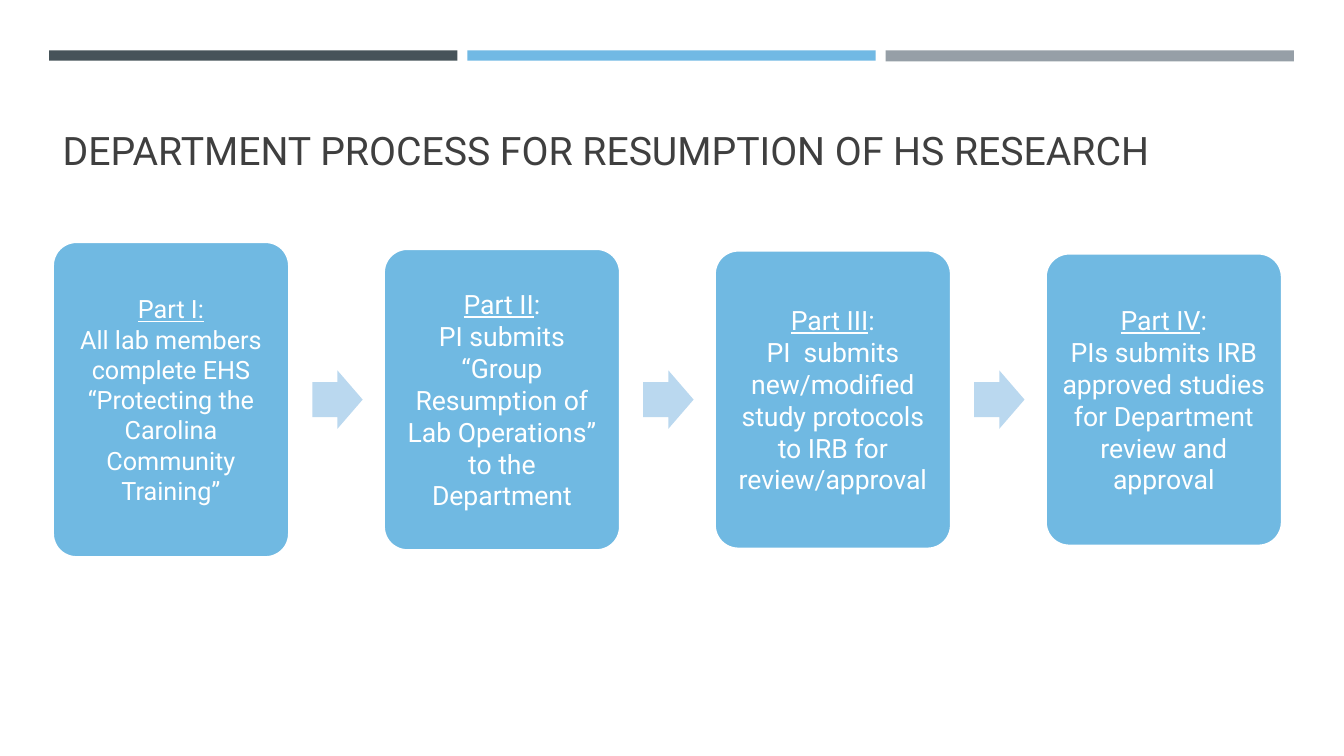
from pptx import Presentation
from pptx.dml.color import RGBColor
from pptx.enum.shapes import MSO_SHAPE as SHAPE
from pptx.enum.text import MSO_ANCHOR as ANCHOR, PP_ALIGN as ALIGN
from pptx.util import Cm, Pt

WHITE = RGBColor(0xFF, 0xFF, 0xFF)
CHARCOAL = RGBColor(0x3F, 0x3F, 0x3F)
SLATE = RGBColor(0x46, 0x53, 0x59)
SKY = RGBColor(0x71, 0xB9, 0xE4)
GREY = RGBColor(0x96, 0x9F, 0xA7)
STEP_BLUE = RGBColor(0x70, 0xB9, 0xE2)
ARROW_BLUE = RGBColor(0xBA, 0xD8, 0xEF)

BAR_LEFT, BAR_TOP, BAR_WIDTH, BAR_PITCH = 1.24, 1.27, 10.29, 10.54
STEP_LEFT, STEP_WIDTH, STEP_PITCH = 1.33, 5.96, 8.34
ROW_MIDDLE = 10.07
ARROW_OFFSET, ARROW_WIDTH, ARROW_HEIGHT = 6.54, 1.27, 1.47

BARS = [(SLATE, 0.26), (SKY, 0.26), (GREY, 0.28)]

# Underlined heading, rest of heading, body, box height, text size, inset
STEPS = [
    ("Part I:", "",
     "All lab members complete EHS “Protecting the Carolina Community Training”",
     7.95, 18, 0.18),
    ("Part II", ":",
     "PI submits “Group Resumption of Lab Operations” to the Department",
     7.6, 19, 0.2),
    ("Part III", ":",
     "PI  submits new/modified study protocols to IRB for review/approval",
     7.52, 19, 0.2),
    ("Part IV", ":",
     "PIs submits IRB approved studies for Department review and approval",
     7.37, 19, 0.2),
]


class ProcessSlide:
    font = "Roboto"

    def __init__(self, prs):
        self.slide = prs.slides.add_slide(prs.slide_layouts[6])

    def shape(self, kind, left, top, width, height, fill):
        sp = self.slide.shapes.add_shape(
            kind, Cm(left), Cm(top), Cm(width), Cm(height))
        sp.shadow.inherit = False
        sp.fill.solid()
        sp.fill.fore_color.rgb = fill
        sp.line.fill.background()
        return sp

    def format_run(self, r, size, color):
        r.font.name = self.font
        r.font.size = Pt(size)
        r.font.color.rgb = color

    def title(self, text, left, top, width, height):
        box = self.slide.shapes.add_textbox(
            Cm(left), Cm(top), Cm(width), Cm(height))
        tf = box.text_frame
        tf.word_wrap = True
        tf.vertical_anchor = ANCHOR.BOTTOM
        tf.text = text
        self.format_run(tf.paragraphs[0].runs[0], 28, CHARCOAL)

    def step(self, left, heading, suffix, body, height, size, inset):
        sp = self.shape(SHAPE.ROUNDED_RECTANGLE, left, ROW_MIDDLE - height / 2,
                        STEP_WIDTH, height, STEP_BLUE)
        sp.adjustments[0] = 0.1
        sp.line.color.rgb = WHITE
        sp.line.width = Pt(1.75)
        tf = sp.text_frame
        tf.word_wrap = True
        tf.vertical_anchor = ANCHOR.MIDDLE
        tf.margin_left = tf.margin_right = Cm(inset)
        tf.margin_top = tf.margin_bottom = Cm(inset)
        tf.text = heading
        head = tf.paragraphs[0]
        head.runs[0].font.underline = True
        if suffix:
            head.add_run().text = suffix
        tf.add_paragraph().text = body
        for p in tf.paragraphs:
            p.alignment = ALIGN.CENTER
            for r in p.runs:
                self.format_run(r, size, WHITE)

    def arrow(self, left):
        sp = self.shape(SHAPE.RIGHT_ARROW, left, ROW_MIDDLE - ARROW_HEIGHT / 2,
                        ARROW_WIDTH, ARROW_HEIGHT, ARROW_BLUE)
        sp.adjustments[0] = 0.6
        sp.adjustments[1] = 0.5


def main():
    prs = Presentation()
    prs.slide_width, prs.slide_height = Cm(33.87), Cm(19.05)
    s = ProcessSlide(prs)
    for i, (color, height) in enumerate(BARS):
        s.shape(SHAPE.RECTANGLE, BAR_LEFT + i * BAR_PITCH, BAR_TOP,
                BAR_WIDTH, height, color)
    s.title("DEPARTMENT PROCESS FOR RESUMPTION OF HS RESEARCH",
            1.33, 1.75, 31.6, 2.74)
    for i, step in enumerate(STEPS):
        left = STEP_LEFT + i * STEP_PITCH
        s.step(left, *step)
        if i < len(STEPS) - 1:
            s.arrow(left + ARROW_OFFSET)
    prs.save("out.pptx")


if __name__ == "__main__":
    main()
